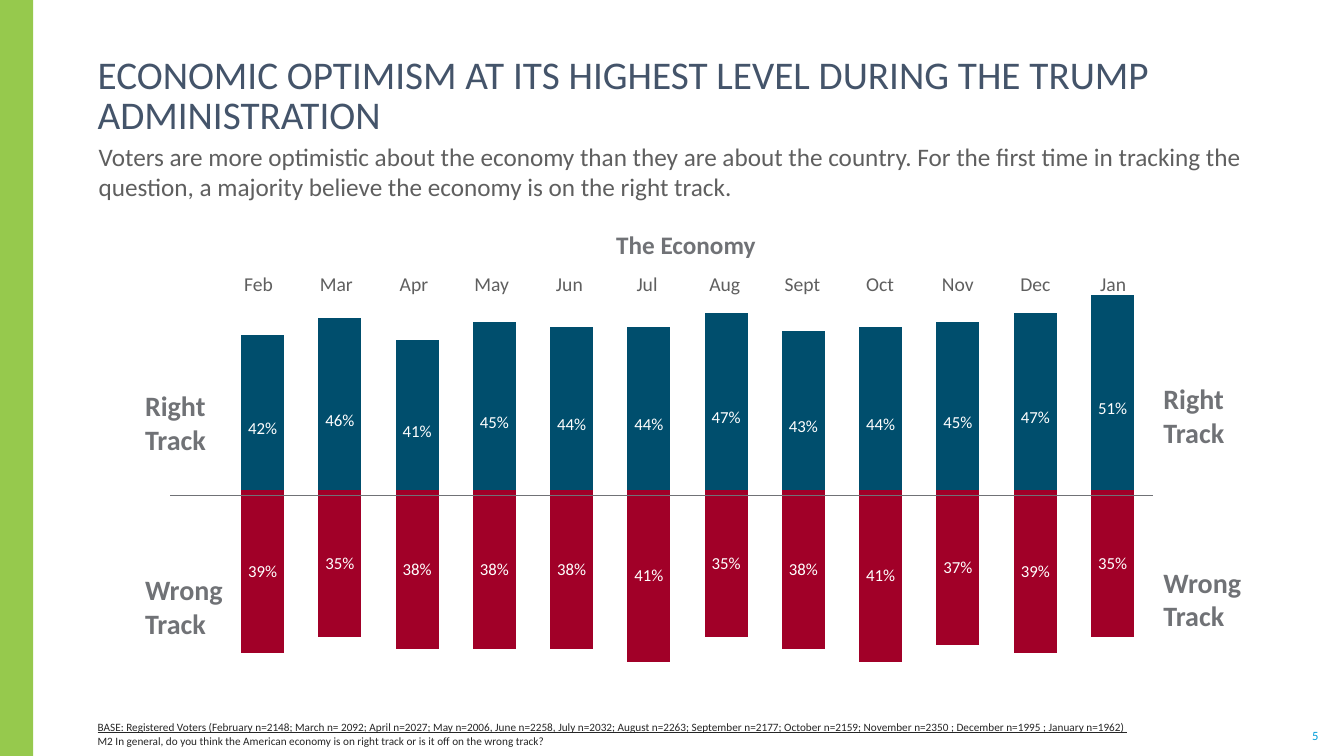
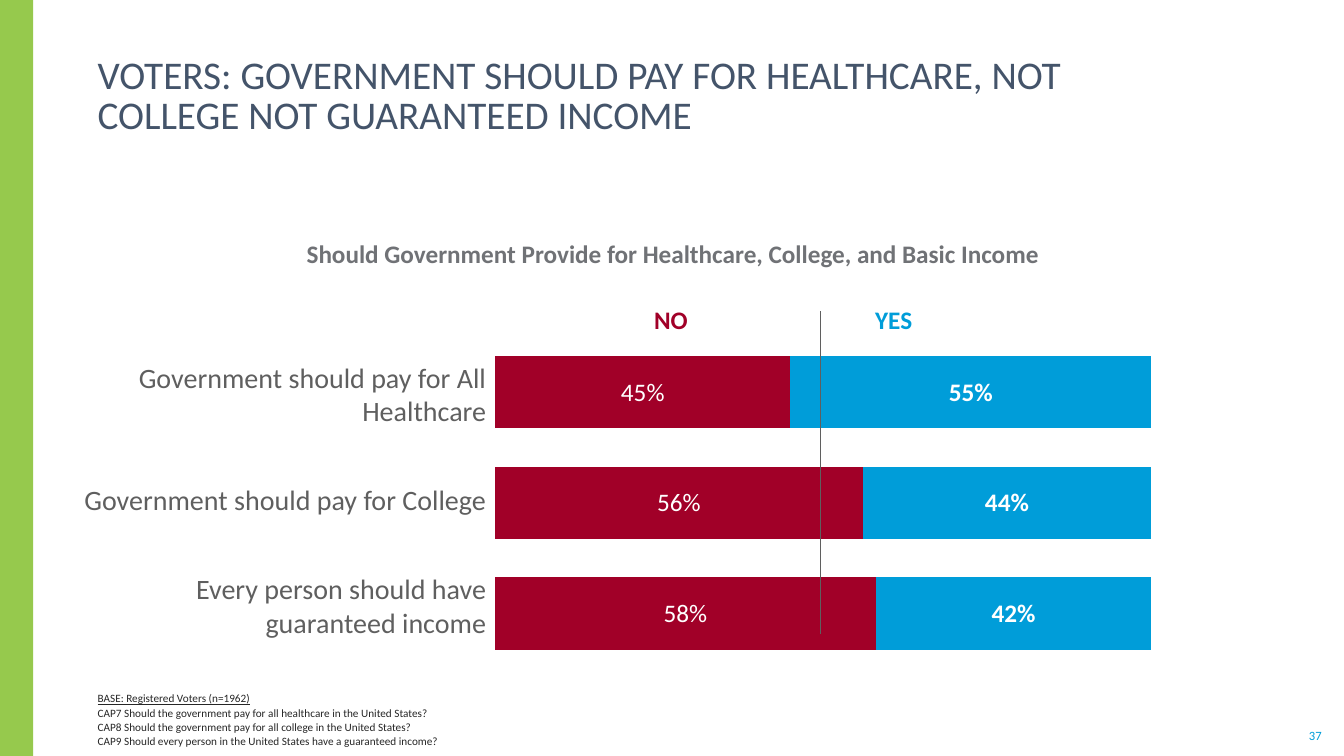
"""Build two survey slides on the economy and the role of government."""
import pptx
import pptx.chart.data
import pptx.dml.color
import pptx.enum.chart
import pptx.enum.shapes
import pptx.enum.text
import pptx.oxml
import pptx.oxml.ns
import pptx.util

Inches = pptx.util.Inches
Pt = pptx.util.Pt
RGBColor = pptx.dml.color.RGBColor
Align = pptx.enum.text.PP_ALIGN
Anchor = pptx.enum.text.MSO_ANCHOR
Kind = pptx.enum.chart.XL_CHART_TYPE

FONT = "Calibri"
GREEN = RGBColor(0x96, 0xC9, 0x4D)
SLATE = RGBColor(0x44, 0x54, 0x6A)
GREY = RGBColor(0x5F, 0x5F, 0x5F)
STEEL = RGBColor(0x70, 0x72, 0x76)
INK = RGBColor(0x26, 0x26, 0x26)
NAVY = RGBColor(0x00, 0x4E, 0x6D)
RED = RGBColor(0xA1, 0x00, 0x28)
BLUE = RGBColor(0x00, 0x9D, 0xD9)
WHITE = RGBColor(0xFF, 0xFF, 0xFF)

HEAD = {"size": Pt(28), "color": SLATE}
LEAD = {"size": Pt(18), "color": GREY}
NOTE = {"size": Pt(8), "color": INK}
PAGE = {"size": Pt(9), "color": BLUE}
SIDE = {"size": Pt(20), "color": STEEL, "bold": True}
ITEM = {"size": Pt(20), "color": GREY}
TOPIC = {"size": Pt(18), "color": STEEL, "bold": True}
MONTH = {"size": Pt(14), "color": GREY, "bold": False}
BASE = {"size": Pt(10), "color": GREY}
SMALL = {"size": Pt(12), "color": WHITE}
LARGE = {"size": Pt(18), "color": WHITE, "bold": False}
PLAIN_GRID = "{2D5ABB26-0587-4C30-8999-92F81FD0307C}"
FLUSH = {"margin_top": 0, "margin_bottom": 0}
TIGHT = dict(FLUSH, margin_left=0, margin_right=0)
FOOT = dict(FLUSH, vertical_anchor=Anchor.BOTTOM)
MID = {"vertical_anchor": Anchor.MIDDLE}

MONTHS = "Feb Mar Apr May Jun Jul Aug Sept Oct Nov Dec Jan".split()
RIGHT = (.42, .46, .41, .45, .44, .44, .47, .43, .44, .45, .47, .51)
WRONG = (.39, .35, .38, .38, .38, .41, .35, .38, .41, .37, .39, .35)
ITEMS = ("Government should pay for All Healthcare",
         "Government should pay for College",
         "Every person should have guaranteed income")


def put(thing, vals):
    """Set each attribute in vals on thing."""
    for name, val in vals.items():
        setattr(thing, name, val)


def style(font, look):
    """Apply a text look to a font."""
    put(font, {"name": FONT} | {k: v for k, v in look.items() if k != "color"})
    font.color.rgb = look["color"]


def write(slide, box, lines, look, align=Align.LEFT, frame=None, para=None):
    """Add a text box with one paragraph per line."""
    shape = slide.shapes.add_textbox(*map(Inches, box))
    text = shape.text_frame
    put(text, {"word_wrap": True} | (frame or {}))
    text.text = "\n".join(lines)
    for part in text.paragraphs:
        put(part, {"alignment": align} | (para or {}))
        style(part.runs[0].font, look)
    return text.paragraphs


def rule(slide, start, end, color):
    """Draw a thin straight line."""
    line = slide.shapes.add_connector(
        pptx.enum.shapes.MSO_CONNECTOR.STRAIGHT, *map(Inches, start + end))
    line.line.color.rgb = color
    line.line.width = Pt(.85)
    shape = line._element.spPr
    shape.append(shape.makeelement(pptx.oxml.ns.qn("a:effectLst"), {}))


def layout(chart, box):
    """Fix the inner plot area as shares of the chart."""
    area = chart._chartSpace.chart.plotArea
    for old in area.findall(pptx.oxml.ns.qn("c:layout")):
        area.remove(old)
    spots = "".join(f'<c:{n} val="{v}"/>' for n, v in zip("xywh", box))
    area.insert(0, pptx.oxml.parse_xml(
        f'<c:layout {pptx.oxml.ns.nsdecls("c")}><c:manualLayout>'
        '<c:layoutTarget val="inner"/><c:xMode val="edge"/>'
        f'<c:yMode val="edge"/>{spots}</c:manualLayout></c:layout>'))


def graph(slide, kind, box, plot, rows, looks, gap, lap):
    """Add a bar chart with bare axes and centred labels."""
    data = pptx.chart.data.CategoryChartData(number_format="0%")
    data.categories = [str(n + 1) for n in range(len(rows[0]))]
    for n, row in enumerate(rows, 1):
        data.add_series(f"Series {n}", row)
    chart = slide.shapes.add_chart(kind, *map(Inches, box), data).chart
    put(chart, {"has_legend": False, "has_title": False})
    style(chart.font, BASE)
    for axis in (chart.category_axis, chart.value_axis):
        put(axis, {"visible": False, "has_major_gridlines": False})
    bars = chart.plots[0]
    put(bars, {"gap_width": gap, "overlap": lap, "vary_by_categories": False})
    for row, (color, look) in zip(bars.series, looks):
        row.invert_if_negative = False
        row.format.fill.solid()
        row.format.fill.fore_color.rgb = color
        put(row.data_labels, {
            "show_value": True, "number_format": "0%;0%",
            "number_format_is_linked": False,
            "position": pptx.enum.chart.XL_LABEL_POSITION.CENTER})
        style(row.data_labels.font, look)
    layout(chart, plot)
    return chart


def grid(slide):
    """Add the month header table."""
    count = len(MONTHS)
    table = slide.shapes.add_table(
        2, count, *map(Inches, (2.18, 2.24, 9.25, .84))).table
    put(table, {"first_row": False, "horz_banding": False})
    table._tbl.tblPr.find(pptx.oxml.ns.qn("a:tableStyleId")).text = PLAIN_GRID
    for cell in table.iter_cells():
        cell.fill.background()
    table.cell(0, 0).merge(table.cell(0, count - 1))
    heads = [(0, 0, "The Economy", TOPIC)]
    heads += [(1, n, name, MONTH) for n, name in enumerate(MONTHS)]
    for row, col, name, look in heads:
        cell = table.cell(row, col)
        cell.text = name
        part = cell.text_frame.paragraphs[0]
        part.alignment = Align.CENTER
        style(part.runs[0].font, look)


def start(deck, title, page, notes):
    """Add a slide with its band, title, footer and page number."""
    slide = deck.slides.add_slide(deck.slide_layouts[6])
    band = slide.shapes.add_shape(
        pptx.enum.shapes.MSO_SHAPE.RECTANGLE, 0, 0, Inches(.33), Inches(7.5))
    band.shadow.inherit = False
    band.fill.solid()
    band.fill.fore_color.rgb = GREEN
    band.line.fill.background()
    write(slide, (12.97, 7.22, .15, .15), [page], PAGE, Align.CENTER,
          TIGHT | MID | {"word_wrap": False})
    write(slide, (.87, .74, 11.05, .62), [title], HEAD, frame=FOOT,
          para={"line_spacing": .85})
    parts = write(slide, (.87, 7.02, 11.91, .4), notes, NOTE, frame=FOOT)
    parts[0].runs[0].font.underline = True
    for part in parts[1:]:
        part.space_before = Pt(.6)
    return slide


def tracks(deck):
    """Build the right track and wrong track slide."""
    slide = start(
        deck,
        "ECONOMIC OPTIMISM AT ITS HIGHEST LEVEL DURING THE TRUMP "
        "ADMINISTRATION", "5",
        ["BASE: Registered Voters (February n=2148; March n= 2092; "
         "April n=2027; May n=2006, June n=2258, July n=2032; "
         "August n=2263; September n=2177; October n=2159; "
         "November n=2350 ; December n=1995 ; January n=1962)",
         "M2 In general, do you think the American economy is on right "
         "track or is it off on the wrong track?"])
    for top, high, vals, color in ((.67, 4.61, RIGHT, NAVY),
                                   (4.78, 4.32, WRONG, RED)):
        chart = graph(slide, Kind.COLUMN_CLUSTERED, (2.03, top, 9.58, high),
                      (.02, .02, .96, .96), [vals], [(color, SMALL)], 80, -27)
        put(chart.value_axis, {"minimum_scale": 0, "maximum_scale": 1,
                               "reverse_order": vals is WRONG})
    rule(slide, (1.69, 4.92), (11.44, 4.92), STEEL)
    for left, top in ((1.34, 3.81), (11.44, 3.74)):
        for n, word in enumerate(("Right", "Wrong")):
            write(slide, (left, top + 1.82 * n, .99, .77), [word, "Track"],
                  SIDE, frame={"word_wrap": False})
    grid(slide)
    write(slide, (.88, 1.4, 11.9, .34),
          ["Voters are more optimistic about the economy than they are about "
           "the country. For the first time in tracking the question, a "
           "majority believe the economy is on the right track."],
          LEAD, frame=FLUSH)


def needs(deck):
    """Build the slide on what government should pay for."""
    slide = start(
        deck,
        "VOTERS: GOVERNMENT SHOULD PAY FOR HEALTHCARE, NOT COLLEGE NOT "
        "GUARANTEED INCOME", "37",
        ["BASE: Registered Voters (n=1962)",
         "CAP7 Should the government pay for all healthcare in the "
         "United States?",
         "CAP8 Should the government pay for all college in the "
         "United States?",
         "CAP9 Should every person in the United States have a guaranteed "
         "income?"])
    chart = graph(slide, Kind.BAR_STACKED_100, (.75, 2.86, 10.67, 4.39),
                  (.39, .11, .61, .75), [(-.45, -.56, -.58), (.55, .44, .42)],
                  [(RED, LARGE), (BLUE, LARGE | {"bold": True})], 53, 100)
    chart.category_axis.reverse_order = True
    rule(slide, (8.14, 3.09), (8.14, 6.29), GREY)
    for n, item in enumerate(ITEMS):
        write(slide, (.67, 3.52 + 1.05 * n, 4.25, .77), [item], ITEM,
              Align.RIGHT, MID)
    for left, word, color, align in ((4.25, "NO", RED, Align.RIGHT),
                                     (8.53, "YES", BLUE, Align.LEFT)):
        write(slide, (left, 2.61, 2.72, 1.11), [word],
              TOPIC | {"color": color}, align,
              MID | {"margin_left": Inches(.15), "margin_right": Inches(.15)})
    write(slide, (1.26, 2.32, 10.83, .4),
          ["Should Government Provide for Healthcare, College, and Basic "
           "Income"], TOPIC, Align.CENTER)


def main():
    """Build and save the deck."""
    deck = pptx.Presentation()
    put(deck, {"slide_width": Inches(13.33), "slide_height": Inches(7.5)})
    tracks(deck)
    needs(deck)
    deck.save("out.pptx")


if __name__ == "__main__":
    main()
